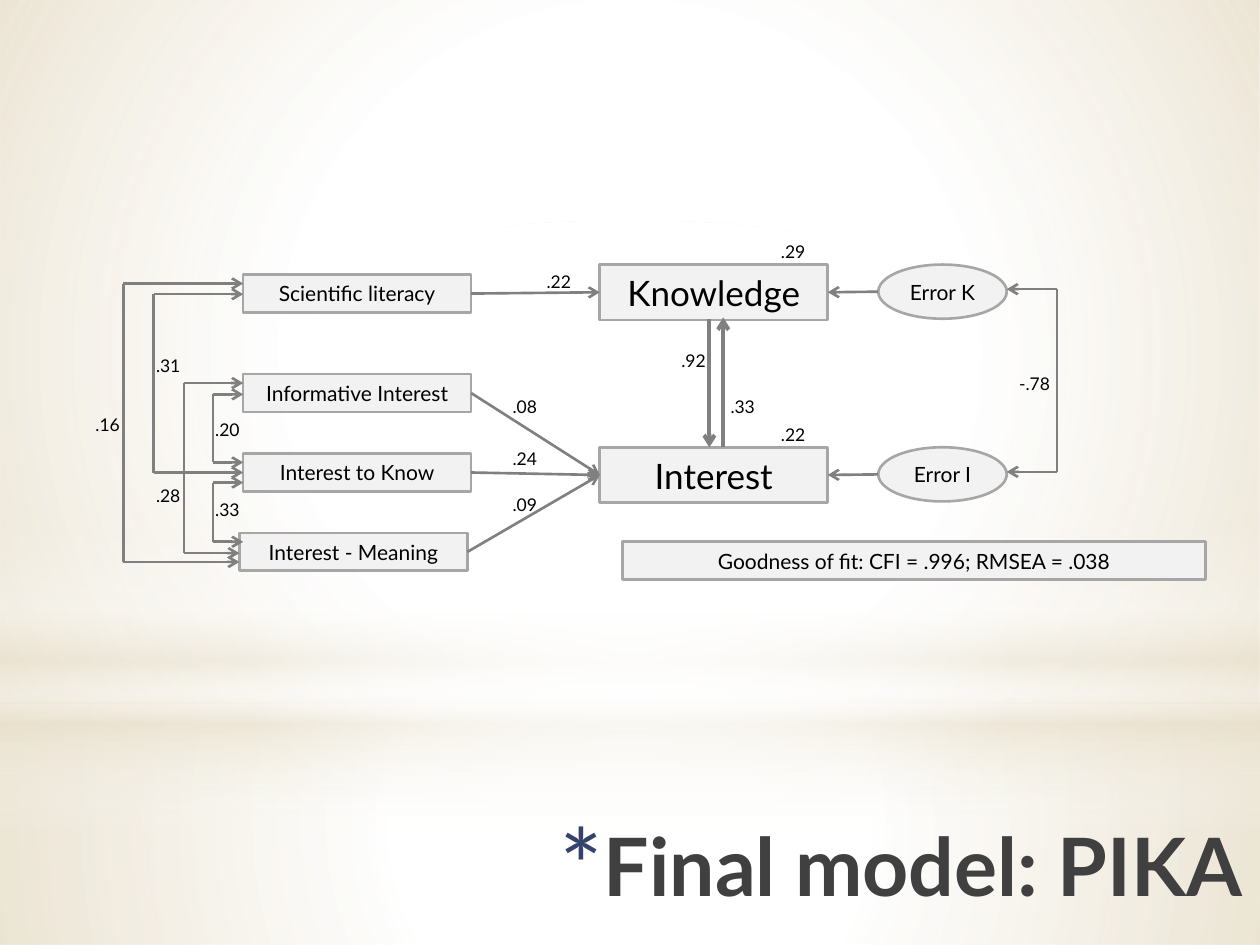
from dataclasses import dataclass

from lxml import etree
from pptx import Presentation
from pptx.dml.color import RGBColor
from pptx.enum.shapes import MSO_CONNECTOR, MSO_SHAPE
from pptx.enum.text import MSO_ANCHOR, PP_ALIGN
from pptx.oxml.ns import qn
from pptx.util import Emu, Inches, Pt

RECTANGLE, OVAL = MSO_SHAPE.RECTANGLE, MSO_SHAPE.OVAL
STRAIGHT = MSO_CONNECTOR.STRAIGHT
CENTER, RIGHT = PP_ALIGN.CENTER, PP_ALIGN.RIGHT
MIDDLE, TOP = MSO_ANCHOR.MIDDLE, MSO_ANCHOR.TOP
LEFT_SIDE, RIGHT_SIDE = 1, 3

WIDTH, HEIGHT = Inches(10), Inches(7.5)
COLUMNS, ROWS = 100, 75


@dataclass(frozen=True)
class Theme:
    font: str = "Lato"
    text: str = "000000"
    title: str = "404040"
    bullet: str = "35436A"
    box_fill: str = "F2F2F2"
    box_line: str = "A6A6A6"
    arrow: str = "808080"
    white: str = "FFFFFF"
    sand: str = "E7DEC9"
    title_size: float = 46
    outcome_size: float = 20
    node_size: float = 12
    label_size: float = 10
    thin: float = 1.5
    thick: float = 2.25


THEME = Theme()


def grid_x(column):
    return Emu(round(WIDTH * column / COLUMNS))


def grid_y(row):
    return Emu(round(HEIGHT * row / ROWS))


def grid_frame(left, top, width, height):
    return grid_x(left), grid_y(top), grid_x(width), grid_y(height)


def child(parent, tag, **attributes):
    return etree.SubElement(parent, qn(tag), attributes)


def write(shape, text, size, color, align=None, anchor=TOP):
    frame = shape.text_frame
    frame.vertical_anchor = anchor
    para = frame.paragraphs[0]
    para.text = text
    para.alignment = align
    para.font.name = THEME.font
    para.font.size = Pt(size)
    para.font.color.rgb = RGBColor.from_string(color)
    return para


def add_glow(slide, geometry, frame, stops, linear=False):
    """Backdrop with a gradient; each stop is (position %, colour, opacity %)."""
    shape = slide.shapes.add_shape(geometry, *grid_frame(*frame))
    shape.shadow.inherit = False
    shape.line.fill.background()
    gradient = etree.Element(qn("a:gradFill"), rotWithShape="1")
    stop_list = child(gradient, "a:gsLst")
    for position, color, opacity in stops:
        stop = child(stop_list, "a:gs", pos=str(position * 1000))
        tint = child(stop, "a:srgbClr", val=color)
        child(tint, "a:alpha", val=str(opacity * 1000))
    if linear:
        child(gradient, "a:lin", ang="5400000", scaled="0")
    else:
        circle = child(gradient, "a:path", path="circle")
        child(circle, "a:fillToRect", **dict.fromkeys("ltrb", "50000"))
    shape._element.spPr.find(qn("a:prstGeom")).addnext(gradient)


def add_backdrop(slide):
    white, sand = THEME.white, THEME.sand
    add_glow(slide, RECTANGLE, (0, 55.8, 100, 19.2),
             [(0, white, 91), (37, white, 76), (100, sand, 79)])
    add_glow(slide, RECTANGLE, (0, 0, 100, 55.8),
             [(0, white, 89), (48, white, 62), (100, sand, 79)])
    add_glow(slide, RECTANGLE, (0, 41.2, 100, 25),
             [(0, white, 0), (29, white, 30), (45, sand, 40),
              (55, white, 26), (65, sand, 60), (100, white, 0)], linear=True)
    add_glow(slide, OVAL, (0, 17.5, 100, 55.8),
             [(0, white, 100), (56, white, 0)])


def add_title(slide, text):
    box = slide.shapes.add_textbox(*grid_frame(6, 64.3, 93.6, 10.2))
    box.text_frame.word_wrap = True
    para = write(box, text, THEME.title_size, THEME.title, RIGHT)
    para.font.bold = True
    properties = para._p.get_or_add_pPr()
    properties.set("marL", str(Inches(0.35)))
    properties.set("indent", str(-Inches(0.35)))
    bullet = [etree.Element(qn("a:buClr")),
              etree.Element(qn("a:buSzPct"), val="128000"),
              etree.Element(qn("a:buFont"), typeface=THEME.font),
              etree.Element(qn("a:buChar"), char="*")]
    child(bullet[0], "a:srgbClr", val=THEME.bullet)
    for place, element in enumerate(bullet):
        properties.insert(place, element)


def add_node(slide, text, frame, size=THEME.node_size, geometry=RECTANGLE):
    node = slide.shapes.add_shape(geometry, *grid_frame(*frame))
    node.shadow.inherit = False
    node.fill.solid()
    node.fill.fore_color.rgb = RGBColor.from_string(THEME.box_fill)
    node.line.color.rgb = RGBColor.from_string(THEME.box_line)
    node.line.width = Pt(THEME.thin)
    write(node, text, size, THEME.text, CENTER, MIDDLE)
    return node


def add_line(slide, start=(0, 0), end=(0, 0), width=THEME.thin, arrow=True):
    line = slide.shapes.add_connector(
        STRAIGHT, grid_x(start[0]), grid_y(start[1]), grid_x(end[0]), grid_y(end[1]))
    line.line.color.rgb = RGBColor.from_string(THEME.arrow)
    line.line.width = Pt(width)
    if arrow:
        child(line.line._get_or_add_ln(), "a:tailEnd", type="arrow")
    child(line._element.spPr, "a:effectLst")
    return line


def add_path(slide, source, target):
    line = add_line(slide)
    line.begin_connect(source, RIGHT_SIDE)
    line.end_connect(target, LEFT_SIDE)


def add_bracket(slide, spine, top, bottom, top_end, bottom_end):
    """Correlation: an upright line with an arrow at each end."""
    add_line(slide, (spine, top), (spine, bottom), arrow=False)
    add_line(slide, (spine, top), (top_end, top))
    add_line(slide, (spine, bottom), (bottom_end, bottom))


def add_label(slide, text, left, top):
    box = slide.shapes.add_textbox(*grid_frame(left, top, 4 if len(text) == 3 else 4.5, 2.7))
    box.text_frame.word_wrap = False
    write(box, text, THEME.label_size, THEME.text)


def main():
    deck = Presentation()
    deck.slide_width, deck.slide_height = WIDTH, HEIGHT
    slide = deck.slides.add_slide(deck.slide_layouts[6])
    add_backdrop(slide)
    add_title(slide, "Final model: PIKA")

    predictors = [
        add_node(slide, text, (left, top, 18.1, 3))
        for text, left, top in [
            ("Scientific literacy", 19.3, 21.8), ("Informative Interest", 19.3, 29.7),
            ("Interest to Know", 19.3, 36), ("Interest - Meaning", 19, 42.3)]]
    outcomes = []
    for name, error, top in [("Knowledge", "Error K", 21), ("Interest", "Error I", 35.5)]:
        outcome = add_node(slide, name, (47.6, top, 18.1, 4.4), THEME.outcome_size)
        add_node(slide, error, (69.7, top, 10.2, 4.3), geometry=OVAL)
        line = add_line(slide, (69.7, top + 2.15), (65.7, top + 2.2))
        line.end_connect(outcome, RIGHT_SIDE)
        outcomes.append(outcome)
    knowledge, interest = outcomes

    add_path(slide, predictors[0], knowledge)
    for predictor in predictors[1:]:
        add_path(slide, predictor, interest)
    add_line(slide, (56.3, 25.3), (56.3, 35.5), THEME.thick)
    add_line(slide, (57.4, 35.5), (57.4, 25.2), THEME.thick)

    for bracket in [(9.8, 22.5, 44.6, 19.3, 19), (12.2, 23.35, 37.5, 19.3, 19.3),
                    (14.6, 30.4, 43.9, 19.3, 19), (16.9, 31.3, 36.7, 19.3, 19.3),
                    (16.9, 38.3, 43, 19.3, 19.3), (83.9, 22.95, 37.45, 79.9, 79.9)]:
        add_bracket(slide, *bracket)

    for label in [(".33", 16.1, 39.1), (".20", 16.1, 32.8), (".28", 11.4, 38),
                  (".31", 11.4, 27.7), (".16", 6.6, 32.4), (".22", 42.4, 21),
                  (".08", 39.7, 30.9), (".24", 39.7, 35.1), (".09", 39.7, 38.7),
                  (".22", 61, 33.2), (".29", 61, 18.6), (".92", 53.1, 27.3),
                  (".33", 57, 30.9), ("-.78", 79.9, 29.1)]:
        add_label(slide, *label)
    add_node(slide, "Goodness of fit: CFI = .996; RMSEA = .038", (49.4, 43, 46.3, 3))
    deck.save("out.pptx")


if __name__ == "__main__":
    main()
